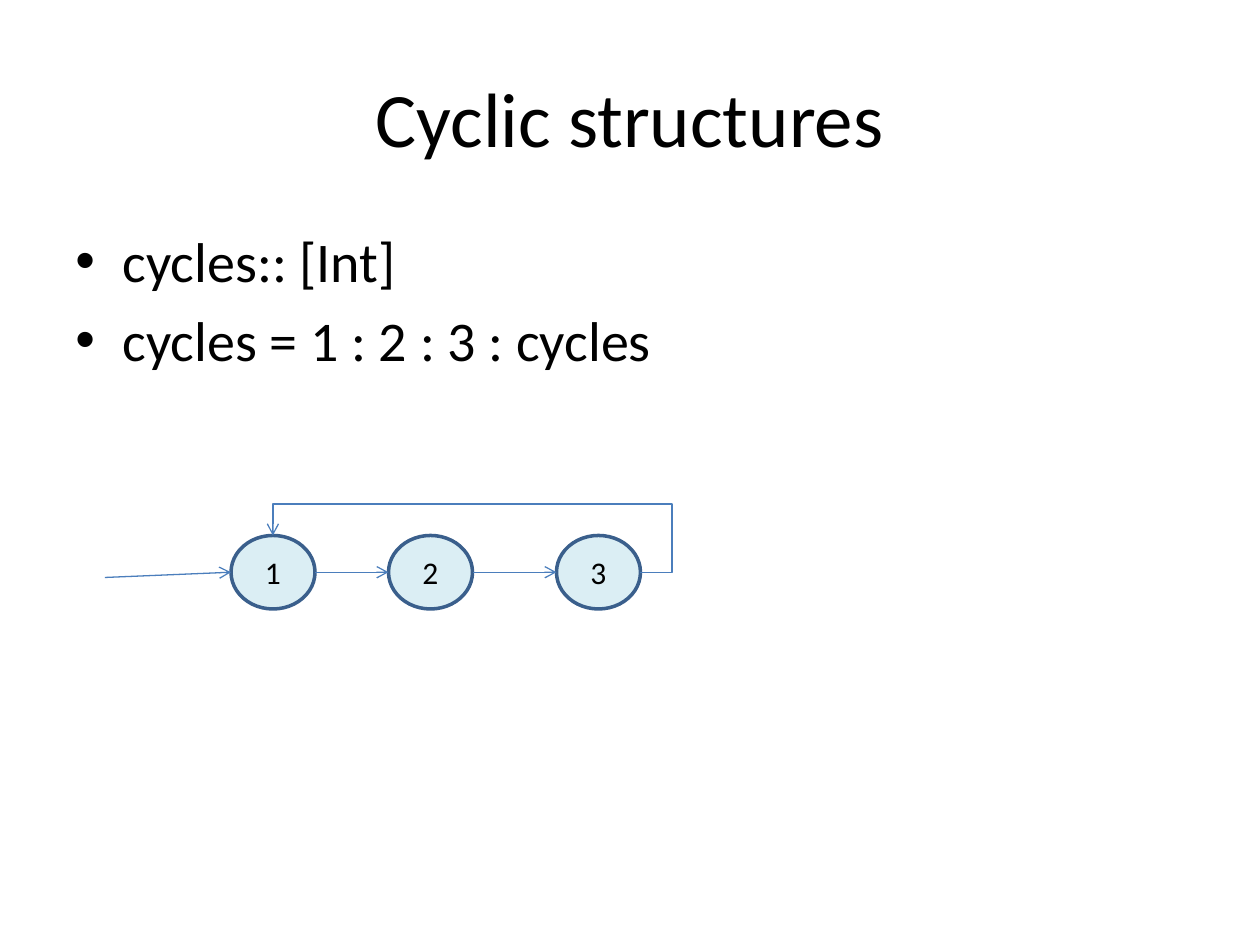
import pptx
import pptx.util
import pptx.dml.color
import pptx.enum.shapes
import pptx.enum.text
import pptx.oxml
import pptx.oxml.ns
import lxml.etree

Pt = pptx.util.Pt
RGBColor = pptx.dml.color.RGBColor
ANCHOR = pptx.enum.text.MSO_ANCHOR
ALIGN = pptx.enum.text.PP_ALIGN
CONNECTOR = pptx.enum.shapes.MSO_CONNECTOR
qn = pptx.oxml.ns.qn

BLACK = RGBColor(0x00, 0x00, 0x00)
NODE_FILL = RGBColor(0xDB, 0xEE, 0xF4)
NODE_EDGE = RGBColor(0x3A, 0x5F, 0x8C)
ARROW_BLUE = RGBColor(0x4B, 0x7E, 0xBC)

# Content
TITLE = "Cyclic structures"
CODE_LINES = ["cycles:: [Int]", "cycles = 1 : 2 : 3 : cycles"]
NODES = [("1", 132), ("2", 222), ("3", 318)]  # label, left

# Geometry in points
NODE_TOP, NODE_WIDTH, NODE_HEIGHT = 306, 48, 42
ENTRY_POINT = (60, 330)
LOOP_RIGHT, LOOP_TOP = 384, 288
BULLET_INDENT = 27

# Connection sites of an ellipse
TOP, LEFT, RIGHT = 0, 2, 6


def write(frame, lines, size, align, anchor):
    frame.word_wrap = True
    frame.vertical_anchor = anchor
    for index, line in enumerate(lines):
        paragraph = frame.add_paragraph() if index else frame.paragraphs[0]
        paragraph.alignment = align
        run = paragraph.add_run()
        run.text = line
        for name, value in {"name": "Calibri", "size": Pt(size)}.items():
            setattr(run.font, name, value)
        run.font.color.rgb = BLACK


def site_point(node, site):
    return {
        TOP: (node.left + node.width // 2, node.top),
        LEFT: (node.left, node.top + node.height // 2),
        RIGHT: (node.left + node.width, node.top + node.height // 2),
    }[site]


def add_arrow(kind, begin, end, begin_glue=None, end_glue=None):
    arrow = slide.shapes.add_connector(kind, *begin, *end)
    arrow.line.color.rgb = ARROW_BLUE
    arrow.line.width = Pt(0.75)
    line = arrow.line._get_or_add_ln()
    lxml.etree.SubElement(line, qn("a:tailEnd"), type="arrow")
    lxml.etree.SubElement(arrow._element.spPr, qn("a:effectLst"))
    joints = arrow._element.find(".//" + qn("p:cNvCxnSpPr"))
    for tag, glue in (("a:stCxn", begin_glue), ("a:endCxn", end_glue)):
        if glue:
            node, site = glue
            lxml.etree.SubElement(joints, qn(tag), id=str(node.shape_id), idx=str(site))
    return arrow


def join(kind, begin_glue, end_glue):
    return add_arrow(kind, site_point(*begin_glue), site_point(*end_glue),
                     begin_glue, end_glue)


presentation = pptx.Presentation()
presentation.slide_width, presentation.slide_height = Pt(720), Pt(540)
slide = presentation.slides.add_slide(presentation.slide_layouts[6])

# Title
title = slide.shapes.add_textbox(Pt(36), Pt(21.6), Pt(648), Pt(90))
write(title.text_frame, [TITLE], 44, ALIGN.CENTER, ANCHOR.MIDDLE)

# Bulleted code lines
code = slide.shapes.add_textbox(Pt(36), Pt(126), Pt(648), Pt(356.4))
write(code.text_frame, CODE_LINES, 32, ALIGN.LEFT, ANCHOR.TOP)
for paragraph in code.text_frame.paragraphs:
    paragraph.space_before = Pt(6.4)
    properties = paragraph._p.get_or_add_pPr()
    properties.set("marL", str(Pt(BULLET_INDENT)))
    properties.set("indent", str(-Pt(BULLET_INDENT)))
    lxml.etree.SubElement(properties, qn("a:buFont"), typeface="Arial")
    lxml.etree.SubElement(properties, qn("a:buChar"), char="•")

# List nodes
nodes = []
for label, left in NODES:
    node = slide.shapes.add_shape(pptx.enum.shapes.MSO_SHAPE.OVAL, Pt(left),
                                  Pt(NODE_TOP), Pt(NODE_WIDTH), Pt(NODE_HEIGHT))
    node.shadow.inherit = False
    node.fill.solid()
    node.fill.fore_color.rgb = NODE_FILL
    node.line.color.rgb = NODE_EDGE
    node.line.width = Pt(2)
    write(node.text_frame, [label], 18, ALIGN.CENTER, ANCHOR.MIDDLE)
    nodes.append(node)

# Arrows from each node to the next
for node, following in zip(nodes, nodes[1:]):
    join(CONNECTOR.STRAIGHT, (node, RIGHT), (following, LEFT))

# Loop from the last node over the top, back to the first
first, last = nodes[0], nodes[-1]
loop = join(CONNECTOR.ELBOW, (last, RIGHT), (first, TOP))
begin_x, begin_y = site_point(last, RIGHT)
bends = {
    "adj1": (begin_x - Pt(LOOP_RIGHT)) / loop.width,
    "adj2": (begin_y - Pt(LOOP_TOP)) / loop.height,
}
outline = loop._element.spPr.find(qn("a:prstGeom"))
outline.set("prst", "bentConnector4")
adjustments = outline.find(qn("a:avLst"))
if adjustments is None:
    adjustments = lxml.etree.SubElement(outline, qn("a:avLst"))
for name, share in bends.items():
    lxml.etree.SubElement(adjustments, qn("a:gd"), name=name,
                          fmla=f"val {round(share * 100000)}")

# Entry arrow into the first node
add_arrow(CONNECTOR.STRAIGHT, [Pt(value) for value in ENTRY_POINT],
          site_point(first, LEFT), end_glue=(first, LEFT))

presentation.save("out.pptx")
